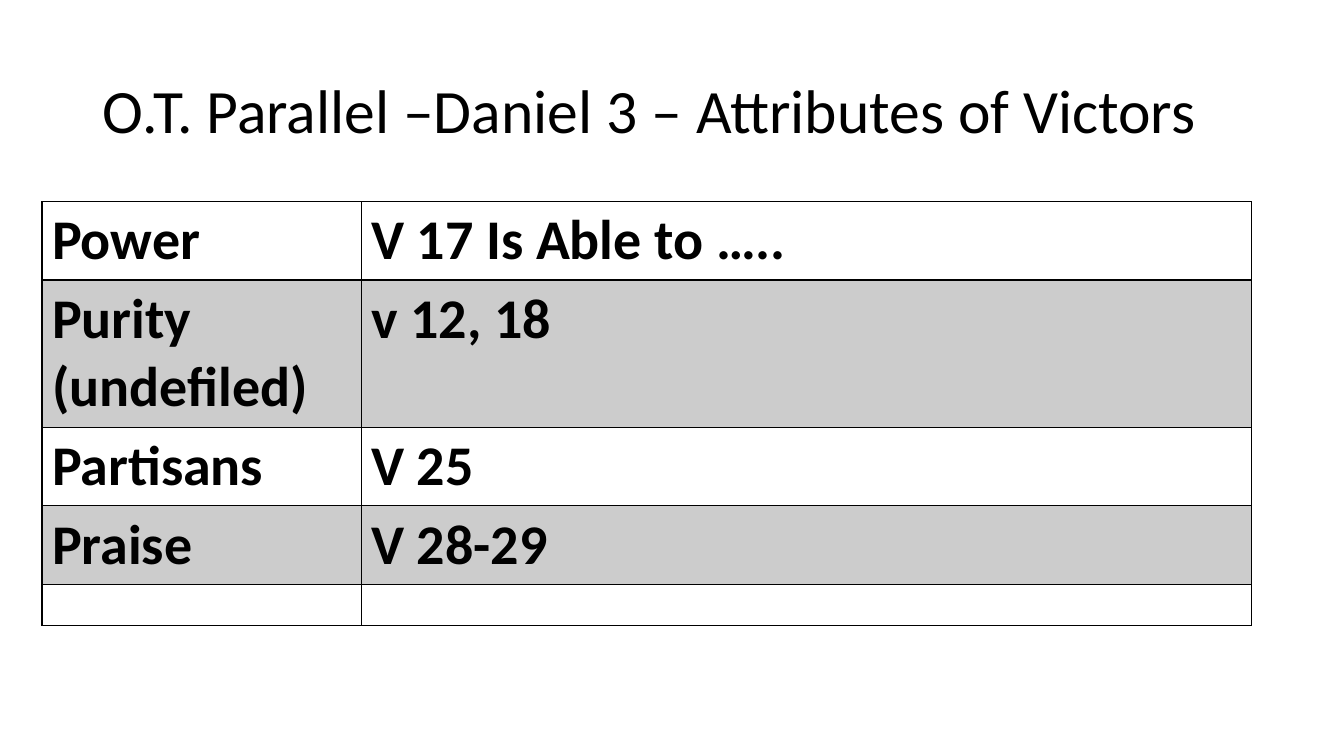
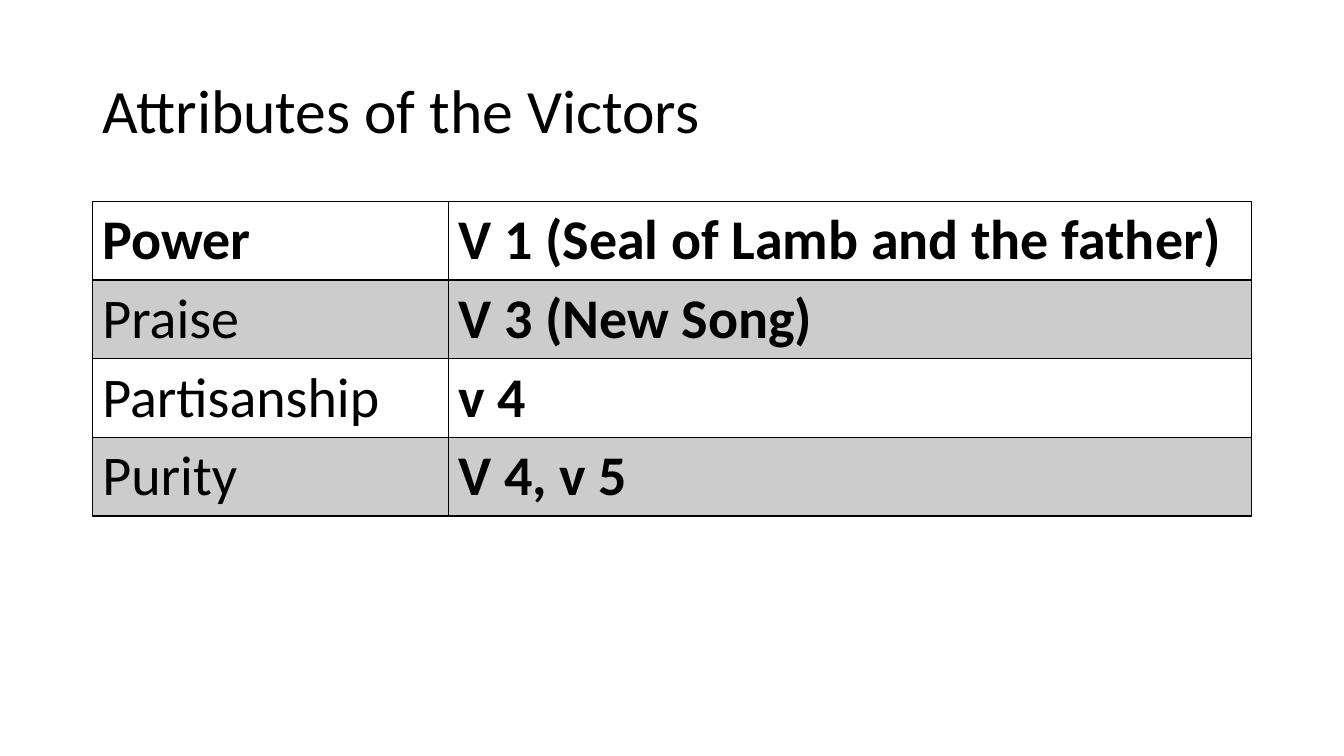
from lxml.etree import SubElement as Sub
from pptx import Presentation
from pptx.dml.color import RGBColor
from pptx.enum.text import MSO_ANCHOR as Anchor, MSO_AUTO_SIZE as Fit, PP_ALIGN as Align
from pptx.oxml.ns import qn
from pptx.util import Inches, Pt

BLACK = RGBColor(0, 0, 0)
WHITE = RGBColor(255, 255, 255)
GREY = RGBColor(204, 204, 204)
FONT = "Calibri"
COLS, ROWS = 160, 90
UNIT = Inches(13.33) / COLS
EDGE = 149
TOP = 24
LINE, TALL, SLIM = 9.36, 17.5, 4.9


def grid(count):
    return round(count * UNIT)


def put(frame, text, size=40, bold=False, space=1.0):
    para = frame.paragraphs[0]
    para.alignment = Align.LEFT
    para.line_spacing = space
    run = para.add_run()
    run.text = text
    run.font.name = FONT
    run.font.size = Pt(size)
    run.font.bold = bold
    run.font.color.rgb = BLACK


deck = Presentation()
deck.slide_width = grid(COLS)
deck.slide_height = grid(ROWS)
plan = deck.slide_layouts[5]
head = plan.placeholders[0]
head.left, head.top, head.width, head.height = map(grid, (11, 4.8, 138, 17.4))

pages = [
    ("O.T. Parallel –Daniel 3 – Attributes of Victors", 5, 38, True, [
        ("Power", "V 17 Is Able to …..", LINE),
        ("Purity (undefiled)", "v 12, 18", TALL),
        ("Partisans", "V 25", LINE),
        ("Praise", "V 28-29", LINE),
        ("", "", SLIM),
    ]),
    ("Attributes of the Victors", 11, 42.4, False, [
        ("Power", "V 1 (Seal of Lamb and the father)", LINE),
        ("Praise", "V 3 (New Song)", LINE),
        ("Partisanship", "v 4", LINE),
        ("Purity", "V 4, v 5", LINE),
    ]),
]

for name, left, split, strong, items in pages:
    slide = deck.slides.add_slide(plan)
    frame = slide.shapes.title.text_frame
    frame.auto_size = Fit.NONE
    frame.vertical_anchor = Anchor.MIDDLE
    put(frame, name, size=44, space=0.9)

    width = EDGE - left
    tall = sum(item[2] for item in items)
    table = slide.shapes.add_table(
        len(items), 2, grid(left), grid(TOP), grid(width), grid(tall)).table
    table.first_row = False
    table.horz_banding = False
    table.columns[0].width = grid(split)
    table.columns[1].width = grid(width - split)

    for row, (*texts, high) in enumerate(items):
        table.rows[row].height = grid(high)
        for col, text in enumerate(texts):
            cell = table.cell(row, col)
            if text:
                put(cell.text_frame, text, bold=strong or row == 0 or col == 1)
            props = cell._tc.get_or_add_tcPr()
            for side in "LRTB":
                thick = (row, side) in ((0, "B"), (1, "T"))
                line = Sub(props, qn("a:ln" + side), w=str(Pt(2 if thick else 1)))
                fill = Sub(line, qn("a:solidFill"))
                Sub(fill, qn("a:srgbClr"), val=str(BLACK))
            cell.fill.solid()
            cell.fill.fore_color.rgb = GREY if row % 2 else WHITE

deck.save("out.pptx")
